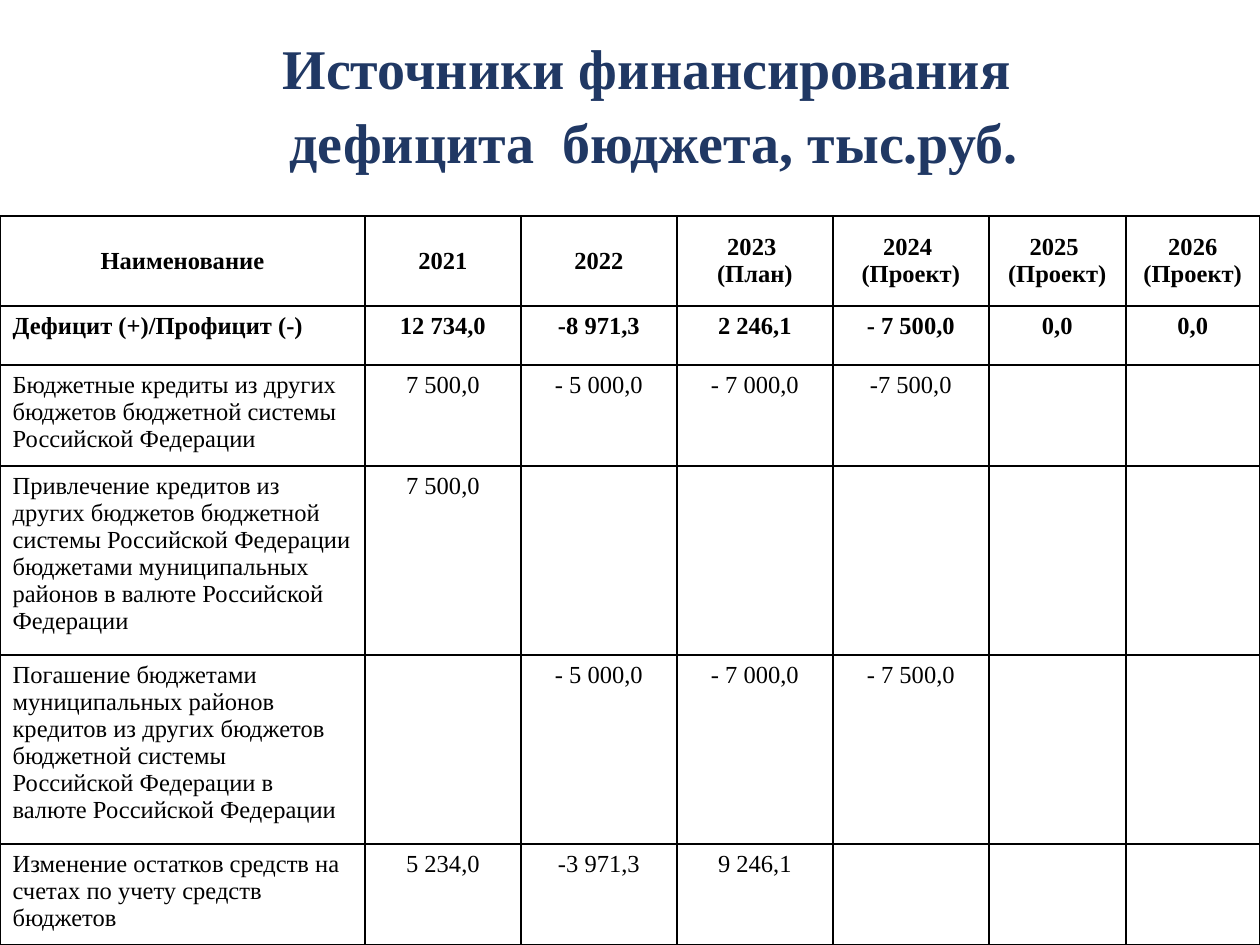
from lxml.etree import SubElement
from pptx import Presentation
from pptx.dml.color import RGBColor
from pptx.enum.text import MSO_ANCHOR as Anchor, PP_ALIGN as Align
from pptx.oxml.ns import qn
from pptx.util import Pt

PX = 914400 // 126
FONT = "Times New Roman"
NAVY, BLACK, WHITE = "203864", "000000", "FFFFFF"

TITLE = ["Источники финансирования ", "дефицита  бюджета, тыс.руб."]
TITLE_BOX = (74, 21, 1160, 149)
TABLE_TOP = 216
COLUMN_WIDTHS = [365, 156, 156, 156, 156, 137, 134]
ROW_HEIGHTS = [90, 59, 101, 189, 189, 101]
ROWS = [
    ["Наименование", "2021", "2022", "2023 \n(План)", "2024 \n(Проект)",
     "2025 \n(Проект)", "2026 (Проект)"],
    ["Дефицит (+)/Профицит (-)", "12 734,0", "-8 971,3", "2 246,1",
     "- 7 500,0", "0,0", "0,0"],
    ["Бюджетные кредиты из других бюджетов бюджетной системы Российской Федерации",
     "7 500,0", "- 5 000,0", "- 7 000,0", "-7 500,0", "", ""],
    ["Привлечение кредитов из других бюджетов бюджетной системы Российской "
     "Федерации бюджетами муниципальных районов в валюте Российской Федерации",
     "7 500,0", "", "", "", "", ""],
    ["Погашение бюджетами муниципальных районов кредитов из других бюджетов "
     "бюджетной системы Российской Федерации в валюте Российской Федерации",
     "", "- 5 000,0", "- 7 000,0", "- 7 500,0", "", ""],
    ["Изменение остатков средств на счетах по учету средств бюджетов",
     "5 234,0", "-3 971,3", "9 246,1", "", "", ""],
]


def color(value):
    return RGBColor.from_string(value)


def style(para, size, tint, bold, align):
    para.alignment = align
    font = para.font
    font.name, font.size, font.bold = FONT, Pt(size), bold
    font.color.rgb = color(tint)


def add_borders(cell):
    """Border lines precede the fill in the cell properties."""
    properties = cell._tc.get_or_add_tcPr()
    for side in ("a:lnL", "a:lnR", "a:lnT", "a:lnB"):
        line = SubElement(properties, qn(side), w=str(Pt(1)))
        fill = SubElement(line, qn("a:solidFill"))
        SubElement(fill, qn("a:srgbClr"), val=BLACK)


def fill_cell(cell, opacity):
    cell.fill.solid()
    cell.fill.fore_color.rgb = color(WHITE)
    if opacity < 100:
        for tint in cell._tc.tcPr.findall(qn("a:solidFill") + "/" + qn("a:srgbClr")):
            SubElement(tint, qn("a:alpha"), val=str(opacity * 1000))


def add_title(page):
    box = page.shapes.add_textbox(*(n * PX for n in TITLE_BOX))
    frame = box.text_frame
    frame.word_wrap = True
    frame.text = "\n".join(TITLE)
    for para in frame.paragraphs:
        para.line_spacing = 1.1
        style(para, 32, NAVY, True, Align.CENTER)


def add_budget_table(page):
    table = page.shapes.add_table(
        len(ROWS), len(COLUMN_WIDTHS), 0, TABLE_TOP * PX,
        sum(COLUMN_WIDTHS) * PX, sum(ROW_HEIGHTS) * PX).table
    for column, width in zip(table.columns, COLUMN_WIDTHS):
        column.width = width * PX
    for row, height in zip(table.rows, ROW_HEIGHTS):
        row.height = height * PX

    for r, texts in enumerate(ROWS):
        for c, text in enumerate(texts):
            cell = table.cell(r, c)
            add_borders(cell)
            fill_cell(cell, 100 if r == 0 else 55)
            cell.vertical_anchor = Anchor.MIDDLE if r == 0 else Anchor.TOP
            cell.text = text
            align = Align.LEFT if r and c == 0 else Align.CENTER
            for para in cell.text_frame.paragraphs:
                style(para, 14, BLACK, r < 2, align)


def main():
    deck = Presentation()
    deck.slide_width, deck.slide_height = 1260 * PX, 945 * PX
    page = deck.slides.add_slide(deck.slide_layouts[6])
    add_title(page)
    add_budget_table(page)
    deck.save("out.pptx")


if __name__ == "__main__":
    main()
